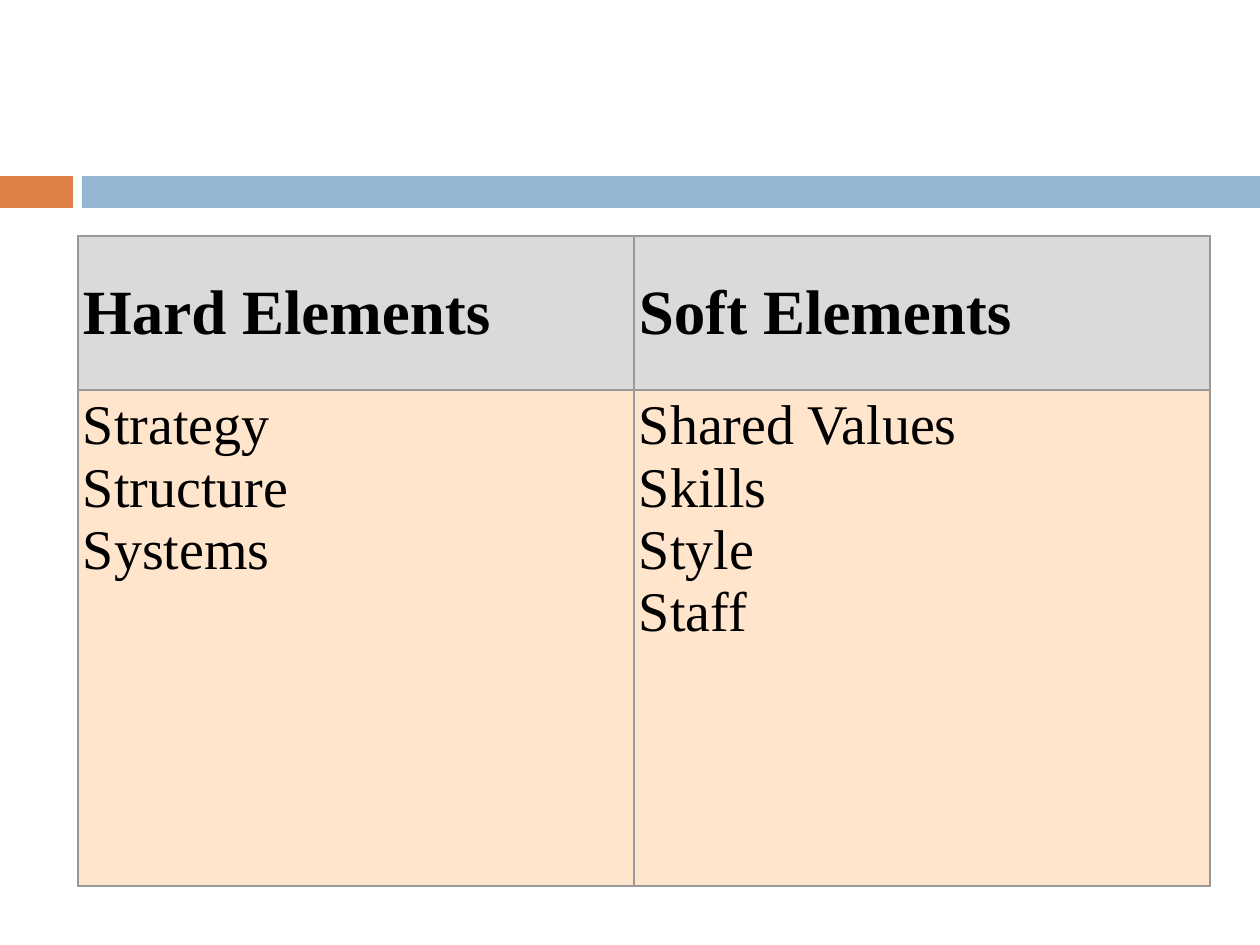
from lxml import etree
from pptx import Presentation
from pptx.dml.color import RGBColor
from pptx.enum.shapes import MSO_SHAPE
from pptx.enum.text import MSO_ANCHOR
from pptx.oxml.ns import qn
from pptx.util import Emu, Pt

RECTANGLE = MSO_SHAPE.RECTANGLE
TOP, MIDDLE = MSO_ANCHOR.TOP, MSO_ANCHOR.MIDDLE
ORANGE = RGBColor(0xDD, 0x80, 0x47)
BLUE = RGBColor(0x94, 0xB6, 0xD2)
GRAY = RGBColor(0xDA, 0xDA, 0xDA)
PEACH = RGBColor(0xFF, 0xE5, 0xCC)
BORDER = RGBColor(0x99, 0x99, 0x99)
BLACK = RGBColor(0, 0, 0)
PX_PER_INCH = 126
WIDTH, HEIGHT = 1260, 945


def px(length):
    return Emu(round(length * 914400 / PX_PER_INCH))


class SlideBuilder:
    font = "Times New Roman"
    inset = 5

    def __init__(self, slide):
        self.slide = slide

    def bar(self, left, top, width, height, color):
        shape = self.slide.shapes.add_shape(
            RECTANGLE, px(left), px(top), px(width), px(height))
        shape.shadow.inherit = False
        shape.fill.solid()
        shape.fill.fore_color.rgb = color
        shape.line.fill.background()

    def table(self, left, top, columns, rows, contents, row_styles):
        table = self.slide.shapes.add_table(
            len(rows), len(columns), px(left), px(top),
            px(sum(columns)), px(sum(rows))).table
        for column, width in zip(table.columns, columns):
            column.width = px(width)
        for row, height, texts, style in zip(table.rows, rows, contents, row_styles):
            row.height = px(height)
            for cell, lines in zip(row.cells, texts):
                self.cell(cell, lines, *style)

    def cell(self, cell, lines, size, bold, anchor, color):
        cell.margin_left = cell.margin_right = px(self.inset)
        cell.margin_top = cell.margin_bottom = px(self.inset)
        cell.vertical_anchor = anchor
        self.borders(cell)
        cell.fill.solid()
        cell.fill.fore_color.rgb = color
        frame = cell.text_frame
        for index, line in enumerate(lines):
            paragraph = frame.add_paragraph() if index else frame.paragraphs[0]
            run = paragraph.add_run()
            run.text = line
            run.font.name = self.font
            run.font.size = Pt(size)
            run.font.bold = bold
            run.font.color.rgb = BLACK

    def borders(self, cell):
        properties = cell._tc.get_or_add_tcPr()
        for side in ("a:lnL", "a:lnR", "a:lnT", "a:lnB"):
            line = etree.SubElement(properties, qn(side), w=str(Pt(1)))
            fill = etree.SubElement(line, qn("a:solidFill"))
            etree.SubElement(fill, qn("a:srgbClr"), val=str(BORDER))


def main():
    presentation = Presentation()
    presentation.slide_width = px(WIDTH)
    presentation.slide_height = px(HEIGHT)
    builder = SlideBuilder(
        presentation.slides.add_slide(presentation.slide_layouts[6]))

    builder.bar(0, 176, 73, 32, ORANGE)
    builder.bar(82, 176, WIDTH - 82, 32, BLUE)
    builder.table(
        left=78, top=236, columns=[556, 576], rows=[154, 496],
        contents=[
            [["Hard Elements"], ["Soft Elements"]],
            [["Strategy", "Structure", "Systems"],
             ["Shared Values", "Skills", "Style", "Staff"]],
        ],
        row_styles=[(36, True, MIDDLE, GRAY), (32, False, TOP, PEACH)])
    presentation.save("out.pptx")


if __name__ == "__main__":
    main()
